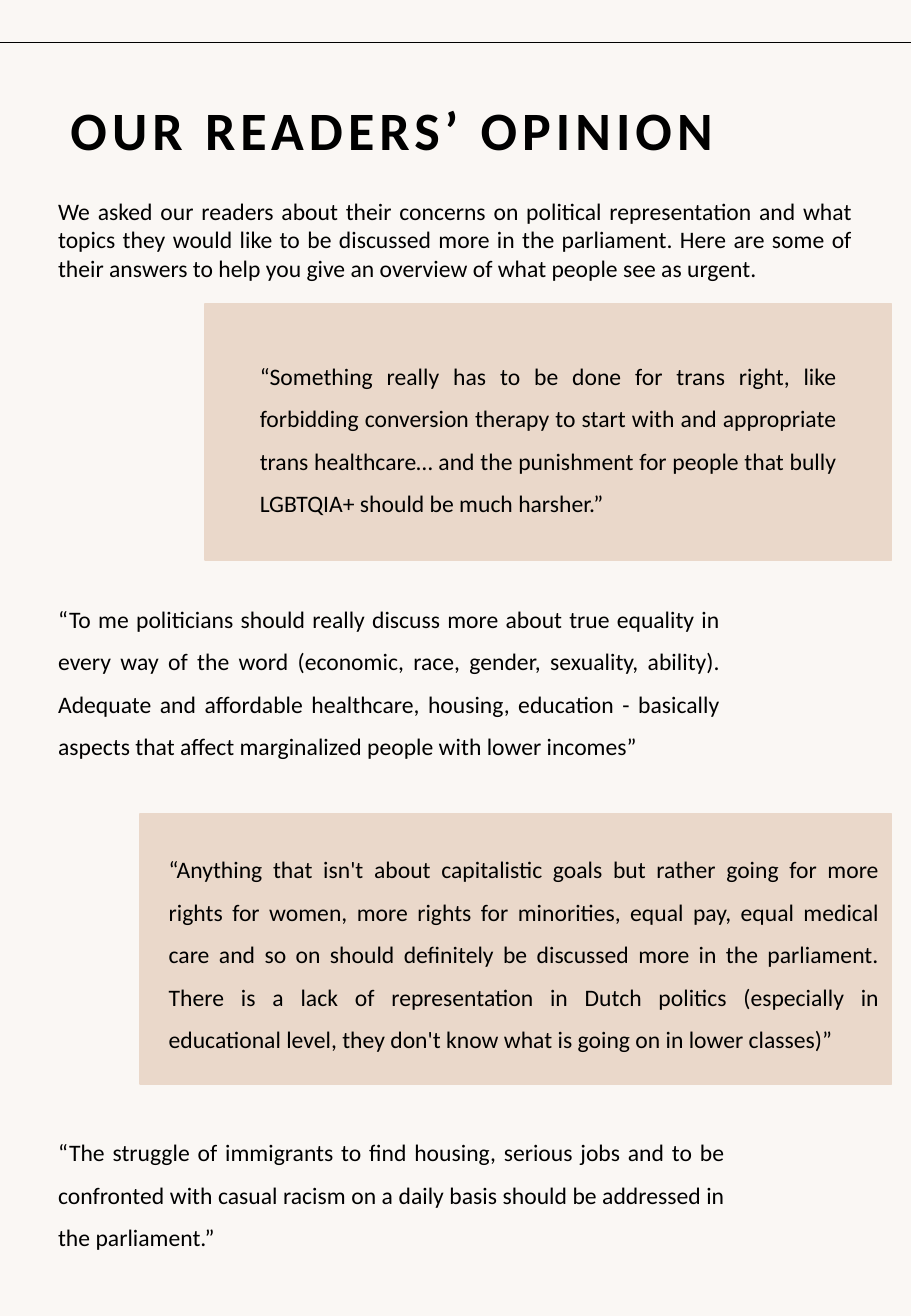
"""Build a portrait magazine page with readers' quotes on alternating panels."""
from pptx import Presentation
from pptx.dml.color import RGBColor
from pptx.enum.shapes import MSO_CONNECTOR, MSO_SHAPE
from pptx.enum.text import MSO_ANCHOR, MSO_AUTO_SIZE, PP_ALIGN
from pptx.util import Inches, Pt
from lxml import etree

RECT, STRAIGHT = MSO_SHAPE.RECTANGLE, MSO_CONNECTOR.STRAIGHT
LEFT, JUSTIFY = PP_ALIGN.LEFT, PP_ALIGN.JUSTIFY
TOP, NO_FIT = MSO_ANCHOR.TOP, MSO_AUTO_SIZE.NONE
PAPER = RGBColor(0xFA, 0xF7, 0xF4)
SAND = RGBColor(0xEA, 0xD8, 0xCA)
BLACK = RGBColor(0, 0, 0)
A = "http://schemas.openxmlformats.org/drawingml/2006/main"

MARGIN = 0.38
PANEL_RIGHT = 7.34
TITLE_FONT = {"name": "Calibri", "size": Pt(32), "bold": True}
BODY_FONT = {"name": "Calibri", "size": Pt(14), "bold": False}

INTRO = (
    "We asked our readers about their concerns on political representation and "
    "what topics they would like to be discussed more in the parliament. Here are "
    "some of their answers to help you give an overview of what people see as urgent."
)
TRANS_RIGHTS = (
    "“Something really has to be done for trans right, like forbidding conversion "
    "therapy to start with and appropriate trans healthcare… and the punishment "
    "for people that bully LGBTQIA+ should be much harsher.”"
)
EQUALITY = (
    "“To me politicians should really discuss more about true equality in every "
    "way of the word (economic, race, gender, sexuality, ability). Adequate and "
    "affordable healthcare, housing, education - basically aspects that affect "
    "marginalized people with lower incomes”"
)
REPRESENTATION = (
    "“Anything that isn't about capitalistic goals but rather going for more "
    "rights for women, more rights for minorities, equal pay, equal medical care "
    "and so on should definitely be discussed more in the parliament. There is a "
    "lack of representation in Dutch politics (especially in educational level, "
    "they don't know what is going on in lower classes)”"
)
IMMIGRANTS = (
    "“The struggle of immigrants to find housing, serious jobs and to be "
    "confronted with casual racism on a daily basis should be addressed in the "
    "parliament.”"
)


def write(sp, text, font, align, spacing):
    tf = sp.text_frame
    tf.word_wrap, tf.auto_size, tf.vertical_anchor = True, NO_FIT, TOP
    p = tf.paragraphs[0]
    p.alignment, p.line_spacing = align, spacing
    r = p.add_run()
    r.text = text
    r.font.color.rgb = BLACK
    for key, value in font.items():
        setattr(r.font, key, value)
    return r


prs = Presentation()
prs.slide_width, prs.slide_height = Inches(7.5), Inches(10.83)
s = prs.slides.add_slide(prs.slide_layouts[5])
s.background.fill.solid()
s.background.fill.fore_color.rgb = PAPER

rule_y = Inches(0.35)
rule = s.shapes.add_connector(STRAIGHT, 0, rule_y, prs.slide_width, rule_y)
rule.line.color.rgb = BLACK
rule.line.width = Pt(0.5)
etree.SubElement(rule._element.spPr, f"{{{A}}}effectLst")

title = s.shapes.title
title.left, title.top, title.width, title.height = map(Inches, (0.48, 0.74, 6.12, 0.64))
r = write(title, "OUR READERS’ OPINION", TITLE_FONT, LEFT, 1.0)
r._r.get_or_add_rPr().set("spc", "300")

for left, top, height in [(1.69, 2.5, 2.11), (1.15, 6.7, 2.22)]:
    sp = s.shapes.add_shape(
        RECT, *map(Inches, (left, top, PANEL_RIGHT - left, height)))
    sp.shadow.inherit = False
    sp.fill.solid()
    sp.fill.fore_color.rgb = SAND
    sp.line.color.rgb = SAND
    sp.line.width = Pt(1)

passages = [
    (INTRO, MARGIN, 1.57, 6.74, 0.81, 1.0),
    (TRANS_RIGHTS, 2.04, 2.81, 4.95, 1.48, 1.5),
    (EQUALITY, MARGIN, 4.81, 5.65, 1.84, 1.5),
    (REPRESENTATION, 1.29, 6.87, 6.05, 1.84, 1.5),
    (IMMIGRANTS, MARGIN, 9.2, 5.69, 1.13, 1.5),
]
for text, left, top, width, height, spacing in passages:
    sp = s.shapes.add_textbox(*map(Inches, (left, top, width, height)))
    write(sp, text, BODY_FONT, JUSTIFY, spacing)

prs.save("out.pptx")
